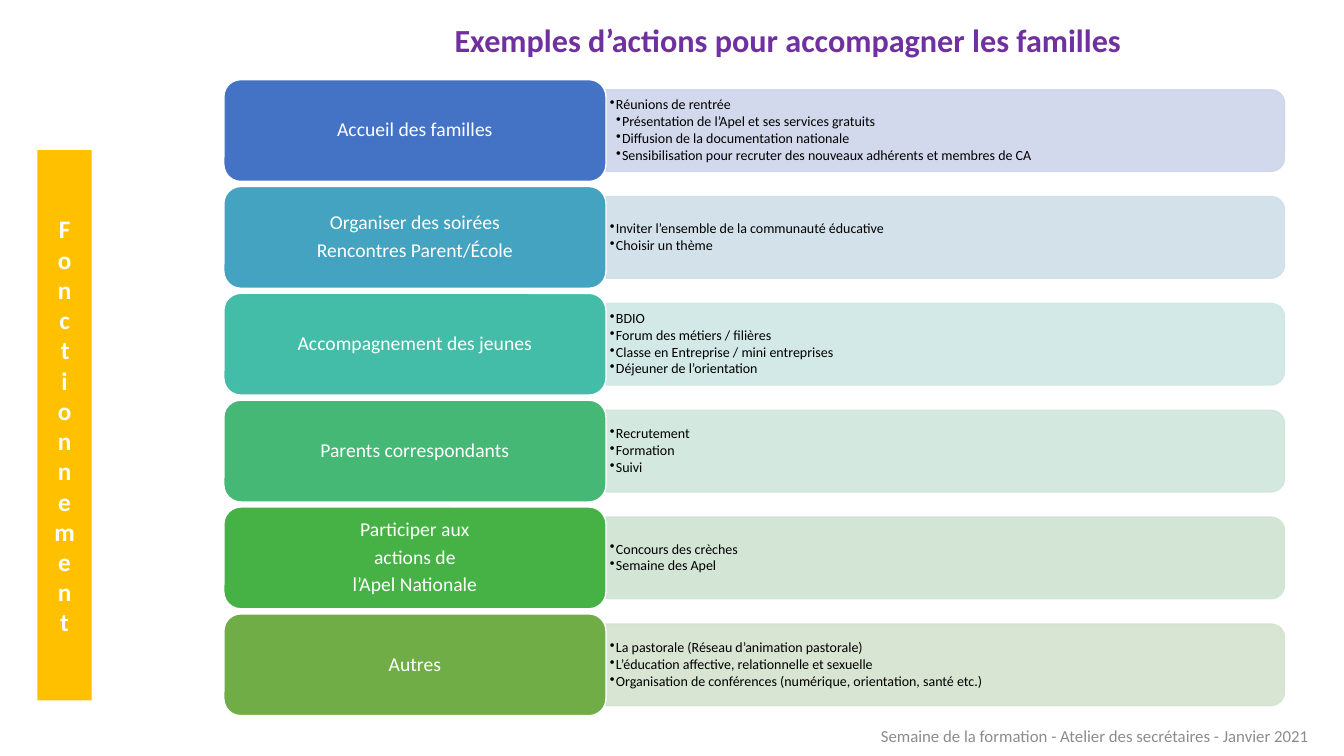
from lxml.etree import SubElement
from pptx import Presentation
from pptx.dml.color import RGBColor
from pptx.enum.shapes import MSO_SHAPE as Shape
from pptx.enum.text import MSO_ANCHOR as Anchor, MSO_AUTO_SIZE as AutoSize, PP_ALIGN as Align
from pptx.oxml.ns import qn
from pptx.util import Inches, Pt

WIDTH, HEIGHT = 13.33, 7.5
FONT = "Calibri"
COLORS = {
    "title": "7030A0", "banner": "FFC000", "footer": "8C8C8C",
    "white": "FFFFFF", "black": "000000",
}

# Rows grid: left, top, pitch, and the sizes of a label and its panel
LEFT, TOP, PITCH = 2.22, 0.79, 1.06
LABEL_W, LABEL_H = 3.79, 1.01
PANEL_W, PANEL_H, PANEL_TEXT_H = 6.73, 0.81, 0.73

# label lines, label colour, panel colour, bullets as (level, text)
ACTIONS = [
    (["Accueil des familles"], "4472C4", "CFD5EA",
     [(1, "Réunions de rentrée"),
      (2, "Présentation de l’Apel et ses services gratuits"),
      (2, "Diffusion de la documentation nationale"),
      (2, "Sensibilisation pour recruter des nouveaux adhérents et membres de CA")]),
    (["Organiser des soirées", "Rencontres Parent/École"], "44A3C0", "CFDFE8",
     [(1, "Inviter l’ensemble de la communauté éducative"),
      (1, "Choisir un thème")]),
    (["Accompagnement des jeunes"], "43BDA7", "CFE7E6",
     [(1, "BDIO"),
      (1, "Forum des métiers / filières"),
      (1, "Classe en Entreprise / mini entreprises"),
      (1, "Déjeuner de l’orientation")]),
    (["Parents correspondants"], "44B874", "CFE6DB",
     [(1, "Recrutement"), (1, "Formation"), (1, "Suivi")]),
    (["Participer aux", "actions de", "l’Apel Nationale"], "46B246", "CFE4D2",
     [(1, "Concours des crèches"), (1, "Semaine des Apel")]),
    (["Autres"], "70AD47", "D5E3CF",
     [(1, "La pastorale (Réseau d’animation pastorale)"),
      (1, "L’éducation affective, relationnelle et sexuelle"),
      (1, "Organisation de conférences (numérique, orientation, santé etc.)")]),
]


def add_box(slide, kind, box, fill, line=None):
    sp = slide.shapes.add_shape(kind, *map(Inches, box))
    sp.shadow.inherit = False
    sp.fill.solid()
    sp.fill.fore_color.rgb = RGBColor.from_string(fill)
    if line:
        sp.line.color.rgb = RGBColor.from_string(line)
        sp.line.width = Pt(1)
    else:
        sp.line.fill.background()
    return sp


def add_text_box(slide, box):
    return slide.shapes.add_textbox(*map(Inches, box))


def set_frame(sp, anchor=Anchor.MIDDLE, insets=(0.1, 0.05)):
    """Wrap and anchor the text; insets are (horizontal, vertical) inches."""
    tf = sp.text_frame
    tf.word_wrap = True
    tf.vertical_anchor = anchor
    tf.margin_left = tf.margin_right = Inches(insets[0])
    tf.margin_top = tf.margin_bottom = Inches(insets[1])
    return tf


def add_paragraph(tf, text, size, color, align=Align.LEFT, bold=False):
    first = tf.paragraphs[0]
    p = tf.add_paragraph() if first.runs else first
    p.alignment = align
    r = p.add_run()
    r.text = text
    r.font.name, r.font.size, r.font.bold = FONT, Pt(size), bold
    r.font.color.rgb = RGBColor.from_string(color)
    return p


def set_spacing(p, after):
    p.line_spacing = 0.9
    p.space_after = Pt(after)


def set_bullet(p, level):
    p.level = level
    pPr = p._p.get_or_add_pPr()
    pPr.set("marL", str(Inches(0.06 * level)))
    pPr.set("indent", str(Inches(-0.06)))
    SubElement(pPr, qn("a:buChar")).set("char", "•")


def add_panel(slide, box, color, bullets):
    """Panel rounded on its right side: a top-rounded shape turned 90 degrees."""
    x, y, w, h = box
    turned = (x + (w - h) / 2, y + (h - w) / 2, h, w)
    sp = add_box(slide, Shape.ROUND_2_SAME_RECTANGLE, turned, color, color)
    sp.rotation = 90
    for rgb in sp._element.spPr.iter(qn("a:srgbClr")):
        SubElement(rgb, qn("a:alpha")).set("val", "90000")
    text_box = (x, y + (h - PANEL_TEXT_H) / 2, w, PANEL_TEXT_H)
    tf = set_frame(add_text_box(slide, text_box), insets=(0.04, 0.02))
    for level, text in bullets:
        p = add_paragraph(tf, text, 10, COLORS["black"])
        set_spacing(p, 1.2)
        set_bullet(p, level)


def add_label(slide, box, color, lines):
    sp = add_box(slide, Shape.ROUNDED_RECTANGLE, box, color, COLORS["white"])
    tf = set_frame(sp, insets=(0.06, 0.03))
    for text in lines:
        set_spacing(add_paragraph(tf, text, 14, COLORS["white"], Align.CENTER), 4.6)


def add_action_row(slide, top, lines, label_color, panel_color, bullets):
    panel_top = top + (LABEL_H - PANEL_H) / 2
    add_panel(slide, (LEFT + LABEL_W, panel_top, PANEL_W, PANEL_H), panel_color, bullets)
    add_label(slide, (LEFT, top, LABEL_W, LABEL_H), label_color, lines)


def add_title(slide, box):
    tf = set_frame(add_text_box(slide, box), Anchor.TOP)
    tf.auto_size = AutoSize.SHAPE_TO_FIT_TEXT
    add_paragraph(tf, "Exemples d’actions pour accompagner les familles", 23,
                  COLORS["title"], Align.CENTER, bold=True)


def add_banner(slide, box):
    """Side banner whose letters are stacked upright."""
    tf = set_frame(add_box(slide, Shape.RECTANGLE, box, COLORS["banner"]))
    tf._txBody.bodyPr.set("vert", "wordArtVert")
    add_paragraph(tf, "Fonctionnement", 18, COLORS["white"], Align.CENTER, bold=True)


def add_footer(slide, box):
    tf = set_frame(add_text_box(slide, box))
    add_paragraph(tf, "Semaine de la formation - Atelier des secrétaires - Janvier 2021",
                  12, COLORS["footer"], Align.CENTER)


def main():
    prs = Presentation()
    prs.slide_width, prs.slide_height = Inches(WIDTH), Inches(HEIGHT)
    slide = prs.slides.add_slide(prs.slide_layouts[6])
    add_footer(slide, (WIDTH - 4.94, HEIGHT - 0.4, 4.94, 0.4))
    for i, action in enumerate(ACTIONS):
        add_action_row(slide, TOP + i * PITCH, *action)
    add_title(slide, (2.75, 0.15, 10.14, 0.49))
    add_banner(slide, (0.37, 1.49, 0.54, 5.46))
    prs.save("out.pptx")


if __name__ == "__main__":
    main()
